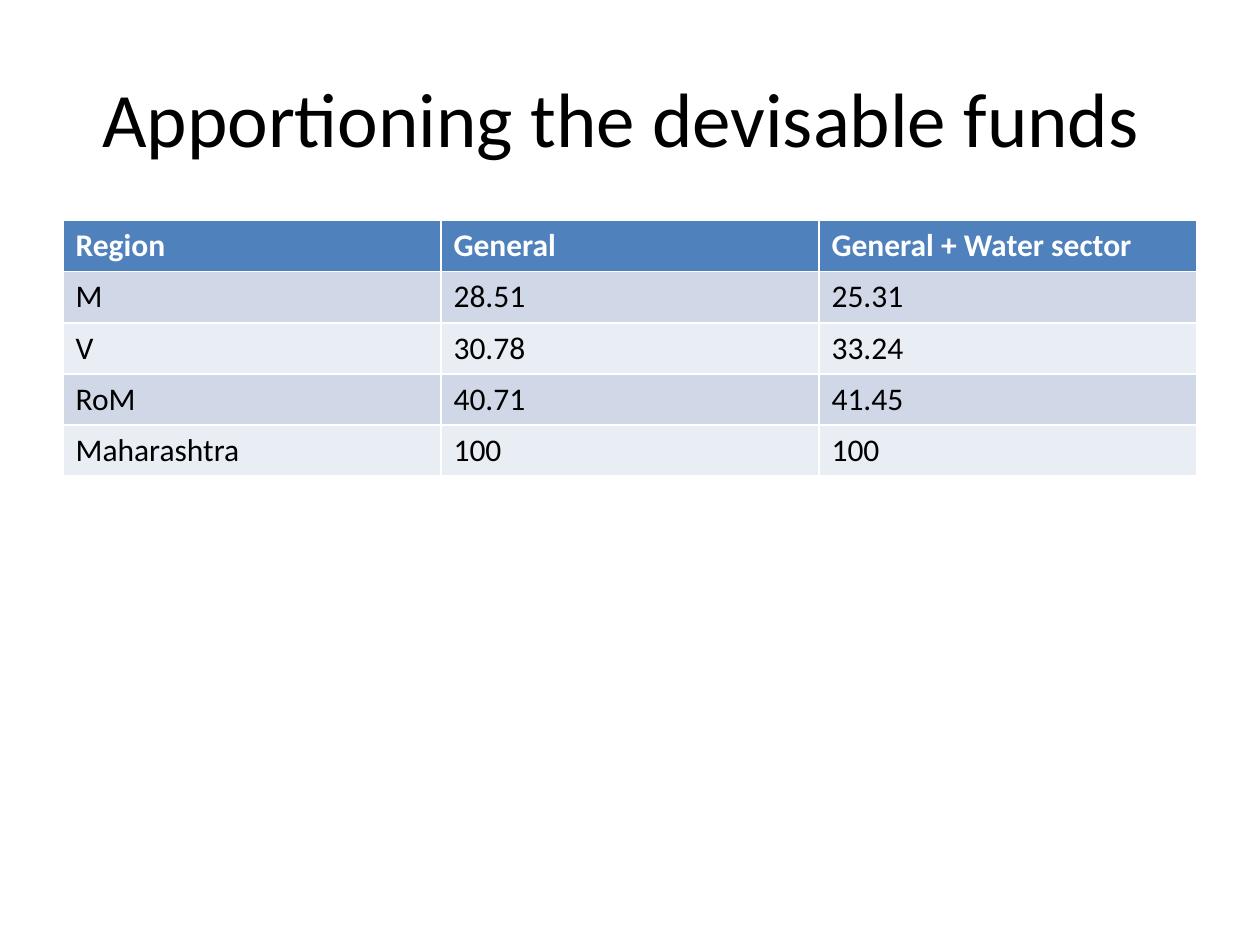
import pptx
import pptx.dml.color
import pptx.enum.text
import pptx.util

Inches = pptx.util.Inches
RGBColor = pptx.dml.color.RGBColor

FONT = "Calibri"
BLACK = RGBColor(0x00, 0x00, 0x00)
WHITE = RGBColor(0xFF, 0xFF, 0xFF)
HEADER_BLUE = RGBColor(0x4F, 0x81, 0xBD)
BAND_FILLS = (RGBColor(0xD0, 0xD8, 0xE8), RGBColor(0xE9, 0xED, 0xF4))

FUND_SHARES = (
    ("Region", "General", "General + Water sector"),
    ("M", "28.51", "25.31"),
    ("V", "30.78", "33.24"),
    ("RoM", "40.71", "41.45"),
    ("Maharashtra", "100", "100"),
)


def add_span(para, text, size, color, bold=False):
    """Add one formatted run to a paragraph."""
    span = para.add_run()
    span.text = text
    span.font.name = FONT
    span.font.size = pptx.util.Pt(size)
    span.font.bold = bold
    span.font.color.rgb = color


def add_title(page, left, top, width, height):
    """Place the centred slide title in the given box."""
    box = page.shapes.add_textbox(left, top, width, height)
    frame = box.text_frame
    frame.word_wrap = True
    frame.vertical_anchor = pptx.enum.text.MSO_ANCHOR.MIDDLE
    para = frame.paragraphs[0]
    para.alignment = pptx.enum.text.PP_ALIGN.CENTER
    add_span(para, "Apportioning the devisable funds ", 44, BLACK)


def add_share_table(page, left, top, width, height):
    """Place the table of fund shares by region in the given box."""
    table = page.shapes.add_table(
        len(FUND_SHARES), len(FUND_SHARES[0]), left, top, width, height
    ).table
    for row, values in enumerate(FUND_SHARES):
        header = row == 0
        fill = HEADER_BLUE if header else BAND_FILLS[(row - 1) % 2]
        for column, value in enumerate(values):
            cell = table.cell(row, column)
            cell.fill.solid()
            cell.fill.fore_color.rgb = fill
            para = cell.text_frame.paragraphs[0]
            add_span(para, value, 18, WHITE if header else BLACK, header)


def main():
    """Build and save the deck."""
    deck = pptx.Presentation()
    deck.slide_width = Inches(10)
    deck.slide_height = Inches(7.5)
    page = deck.slides.add_slide(deck.slide_layouts[6])
    add_title(page, Inches(0.5), Inches(0.3), Inches(9), Inches(1.25))
    add_share_table(page, Inches(0.5), Inches(1.75), Inches(9), Inches(2.03))
    deck.save("out.pptx")


if __name__ == "__main__":
    main()
